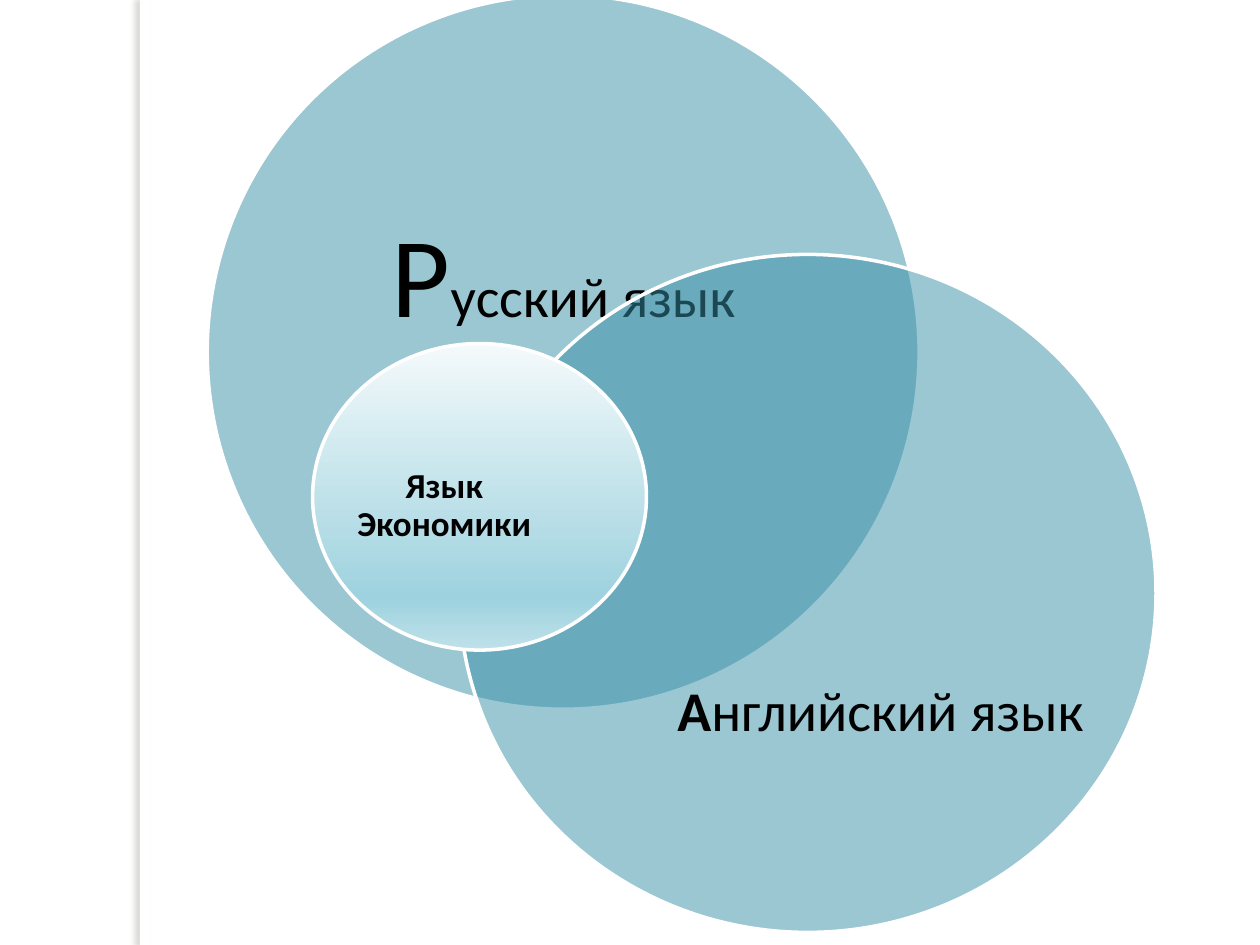
from lxml import etree
from pptx import Presentation
from pptx import util as u
from pptx.dml.color import RGBColor
from pptx.enum import shapes, text
from pptx.oxml.ns import qn

COLORS = {
    "white": "FFFFFF",
    "black": "000000",
    "teal": "3891A7",
    "shadow": "736F63",
}
PALE_GRADIENT = [(0, "F4FAFB"), (83, "9ED2DF"), (100, "BFE1E9")]


class VennSlide:
    font = "Calibri"
    outline_width = 2
    line_spacing = 0.9

    def __init__(self, slide):
        self.slide = slide

    def shape(self, kind, left, top, width, height, fill=None):
        shape = self.slide.shapes.add_shape(
            kind, u.Pt(left), u.Pt(top), u.Pt(width), u.Pt(height))
        shape.shadow.inherit = False
        shape.line.fill.background()
        if fill:
            shape.fill.solid()
            shape.fill.fore_color.rgb = RGBColor.from_string(COLORS[fill])
        return shape

    def edge_panel(self, left, top, width, height):
        """White strip that casts a soft shadow to its left."""
        panel = self.shape(shapes.MSO_SHAPE.RECTANGLE, left, top, width, height, "white")
        effects = panel._element.spPr.find(qn("a:effectLst"))
        shadow = etree.SubElement(
            effects, qn("a:outerShdw"), blurRad=str(u.Pt(3)), dist=str(u.Pt(3)),
            dir=str(180 * 60000), algn="ctr", rotWithShape="0")
        color = etree.SubElement(shadow, qn("a:srgbClr"), val=COLORS["shadow"])
        etree.SubElement(color, qn("a:alpha"), val="25000")

    def circle(self, left, top, width, height, fill=None):
        circle = self.shape(shapes.MSO_SHAPE.OVAL, left, top, width, height, fill)
        circle.line.color.rgb = RGBColor.from_string(COLORS["white"])
        circle.line.width = u.Pt(self.outline_width)
        return circle

    def clear_circle(self, left, top, width, height):
        """Half-transparent teal circle."""
        circle = self.circle(left, top, width, height, "teal")
        color = circle._element.spPr.find(qn("a:solidFill")).find(qn("a:srgbClr"))
        etree.SubElement(color, qn("a:alpha"), val="50000")

    def gradient_circle(self, left, top, width, height, stops):
        circle = self.circle(left, top, width, height)
        circle.fill.gradient()
        circle.fill.gradient_angle = 270
        stop_list = circle._element.spPr.find(qn("a:gradFill")).find(qn("a:gsLst"))
        for stop in list(stop_list):
            stop_list.remove(stop)
        for position, color in stops:
            stop = etree.SubElement(stop_list, qn("a:gs"), pos=str(position * 1000))
            etree.SubElement(stop, qn("a:srgbClr"), val=color)

    def label(self, left, top, width, height, runs):
        """Centred text; runs are (words, size, bold)."""
        box = self.slide.shapes.add_textbox(
            u.Pt(left), u.Pt(top), u.Pt(width), u.Pt(height))
        frame = box.text_frame
        frame.word_wrap = True
        frame.vertical_anchor = text.MSO_ANCHOR.MIDDLE
        frame.margin_left = frame.margin_right = 0
        frame.margin_top = frame.margin_bottom = 0
        paragraph = frame.paragraphs[0]
        paragraph.alignment = text.PP_ALIGN.CENTER
        paragraph.line_spacing = self.line_spacing
        for words, size, bold in runs:
            run = paragraph.add_run()
            run.text = words
            run.font.name = self.font
            run.font.size = u.Pt(size)
            run.font.bold = bold
            run.font.color.rgb = RGBColor.from_string(COLORS["black"])


def main():
    presentation = Presentation()
    presentation.slide_width = u.Pt(720)
    presentation.slide_height = u.Pt(540)
    venn = VennSlide(presentation.slides.add_slide(presentation.slide_layouts[6]))

    venn.edge_panel(80, 0, 5.76, 540)

    venn.clear_circle(118.4, -2.9, 406.8, 408.2)
    venn.label(172.8, 68.4, 298.8, 183.6,
               [("Р", 65, False), ("усский язык", 32, False)])

    venn.clear_circle(262.4, 145.4, 398.2, 387.4)
    venn.label(383.8, 387.4, 239, 40,
               [("А", 32, True), ("нглийский язык", 32, False)])

    venn.gradient_circle(178.6, 196.3, 190.8, 175.2, PALE_GRADIENT)
    venn.label(196.6, 241.2, 114.5, 95.8, [("Язык Экономики", 20, True)])

    presentation.save("out.pptx")


if __name__ == "__main__":
    main()
